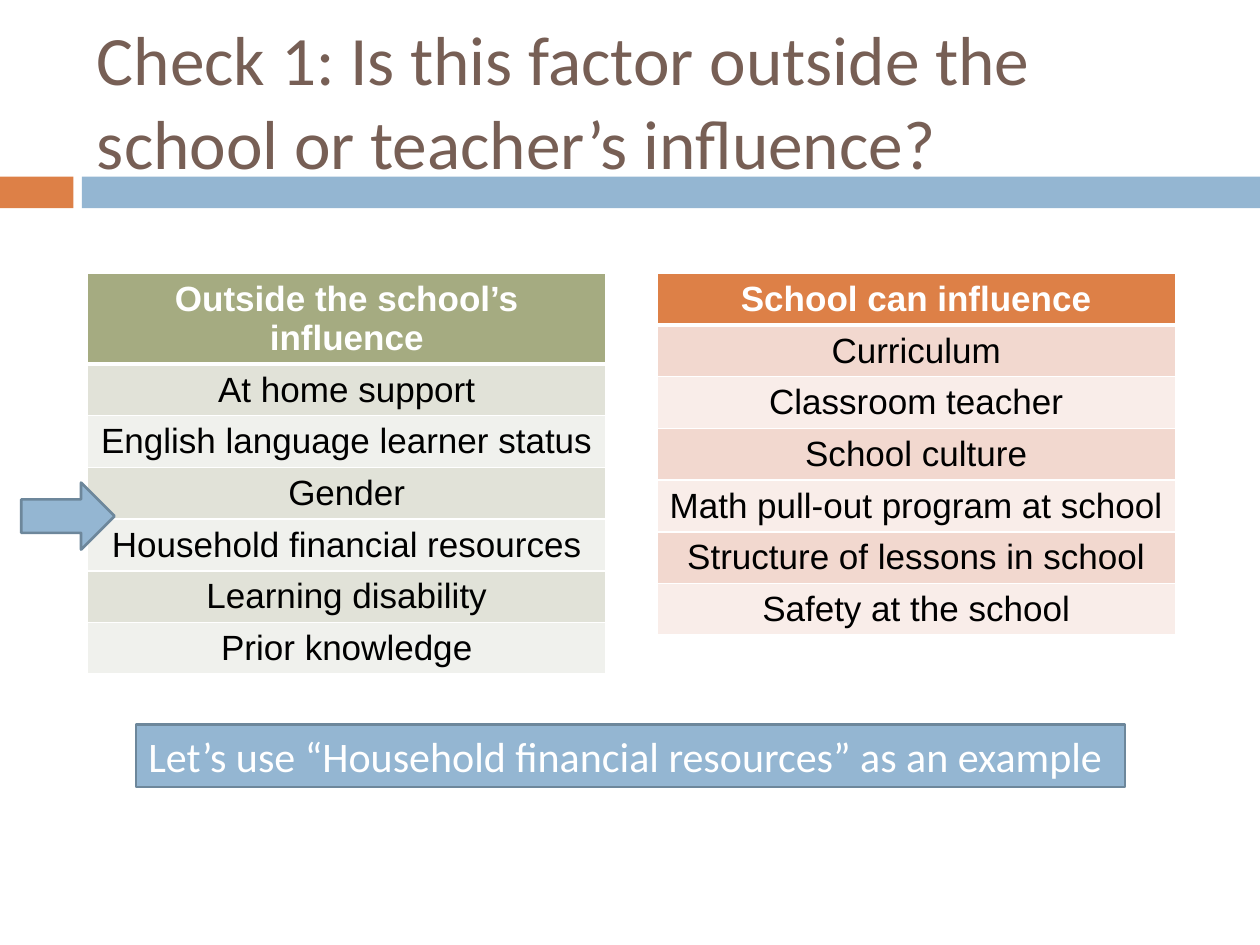
from lxml import etree
from pptx import Presentation
from pptx.dml.color import RGBColor
from pptx.enum.shapes import MSO_SHAPE
from pptx.enum.text import MSO_ANCHOR, MSO_AUTO_SIZE, PP_ALIGN
from pptx.oxml.ns import qn
from pptx.util import Cm, Pt

RECT, ARROW = MSO_SHAPE.RECTANGLE, MSO_SHAPE.RIGHT_ARROW
LEFT, CENTER = PP_ALIGN.LEFT, PP_ALIGN.CENTER
MIDDLE, NO_FIT = MSO_ANCHOR.MIDDLE, MSO_AUTO_SIZE.NONE

WHITE, BLACK, BROWN = "FFFFFF", "000000", "775F55"
BLUE, BLUE_EDGE, ORANGE, GREEN = "94B6D2", "6D879B", "DD8047", "A5AB81"

TITLE = "Check 1: Is this factor outside the school or teacher’s influence?"
EXAMPLE = "Let’s use “Household financial resources” as an example"
TABLES = [
    (GREEN, ("E1E2D8", "F0F1ED"), [
        "Outside the school’s influence",
        "At home support",
        "English language learner status",
        "Gender",
        "Household financial resources",
        "Learning disability",
        "Prior knowledge",
    ]),
    (ORANGE, ("F2D8CF", "F9EDE9"), [
        "School can influence",
        "Curriculum",
        "Classroom teacher",
        "School culture",
        "Math pull-out program at school",
        "Structure of lessons in school",
        "Safety at the school",
    ]),
]
TABLE_LEFT, TABLE_TOP, TABLE_STEP = 1.76, 5.51, 11.48
TABLE_WIDTH, ROW_HEIGHT = 10.46, 1.04


def rgb(color):
    return RGBColor.from_string(color)


def style(p, font, size, color, align, bold=False):
    p.alignment = align
    p.font.name, p.font.size, p.font.bold = font, Pt(size), bold
    p.font.color.rgb = rgb(color)


def add_box(s, kind, left, top, width, height, fill, edge=None):
    sp = s.shapes.add_shape(kind, Cm(left), Cm(top), Cm(width), Cm(height))
    sp.shadow.inherit = False
    sp.fill.solid()
    sp.fill.fore_color.rgb = rgb(fill)
    if edge:
        sp.line.color.rgb = rgb(edge)
        sp.line.width = Pt(1.5)
    else:
        sp.line.fill.background()
    return sp


def set_borders(cell, bottom=1, top=1):
    tc_pr = cell._tc.get_or_add_tcPr()
    widths = {"a:lnL": 1, "a:lnR": 1, "a:lnT": top, "a:lnB": bottom}
    for i, (tag, width) in enumerate(widths.items()):
        ln = etree.Element(qn(tag), w=str(Pt(width)))
        fill = etree.SubElement(ln, qn("a:solidFill"))
        etree.SubElement(fill, qn("a:srgbClr"), val=WHITE)
        tc_pr.insert(i, ln)


def add_table(s, left, head_fill, bands, rows):
    frame = s.shapes.add_table(len(rows), 1, Cm(left), Cm(TABLE_TOP),
                               Cm(TABLE_WIDTH), Cm(ROW_HEIGHT * len(rows)))
    table = frame.table
    for i, text in enumerate(rows):
        head = i == 0
        table.rows[i].height = Cm(ROW_HEIGHT)
        cell = table.cell(i, 0)
        cell.text = text
        cell.fill.solid()
        cell.fill.fore_color.rgb = rgb(head_fill if head else bands[(i - 1) % 2])
        style(cell.text_frame.paragraphs[0], "Arial", 20,
              WHITE if head else BLACK, CENTER, head)
        set_borders(cell, bottom=3 if head else 1, top=3 if i == 1 else 1)


prs = Presentation()
prs.slide_width, prs.slide_height = Cm(25.4), Cm(19.05)
s = prs.slides.add_slide(prs.slide_layouts[5])

add_box(s, RECT, 0, 3.56, 1.48, 0.64, ORANGE)
add_box(s, RECT, 1.65, 3.56, 23.75, 0.64, BLUE)

for n, (head_fill, bands, rows) in enumerate(TABLES):
    add_table(s, TABLE_LEFT + n * TABLE_STEP, head_fill, bands, rows)

title = s.shapes.title
title.left, title.top, title.width, title.height = Cm(1.7), Cm(0.64), Cm(22.66), Cm(2.74)
tf = title.text_frame
tf.text = TITLE
tf.word_wrap, tf.auto_size, tf.vertical_anchor = True, NO_FIT, MIDDLE
style(tf.paragraphs[0], "Calibri", 39.6, BROWN, LEFT)

add_box(s, ARROW, 0.43, 9.73, 1.88, 1.35, BLUE, BLUE_EDGE)

example = add_box(s, RECT, 2.74, 14.6, 19.94, 1.27, BLUE, BLUE_EDGE)
tf = example.text_frame
tf.text = EXAMPLE
tf.word_wrap, tf.auto_size = False, MSO_AUTO_SIZE.SHAPE_TO_FIT_TEXT
style(tf.paragraphs[0], "Calibri", 24, WHITE, LEFT)

prs.save("out.pptx")
